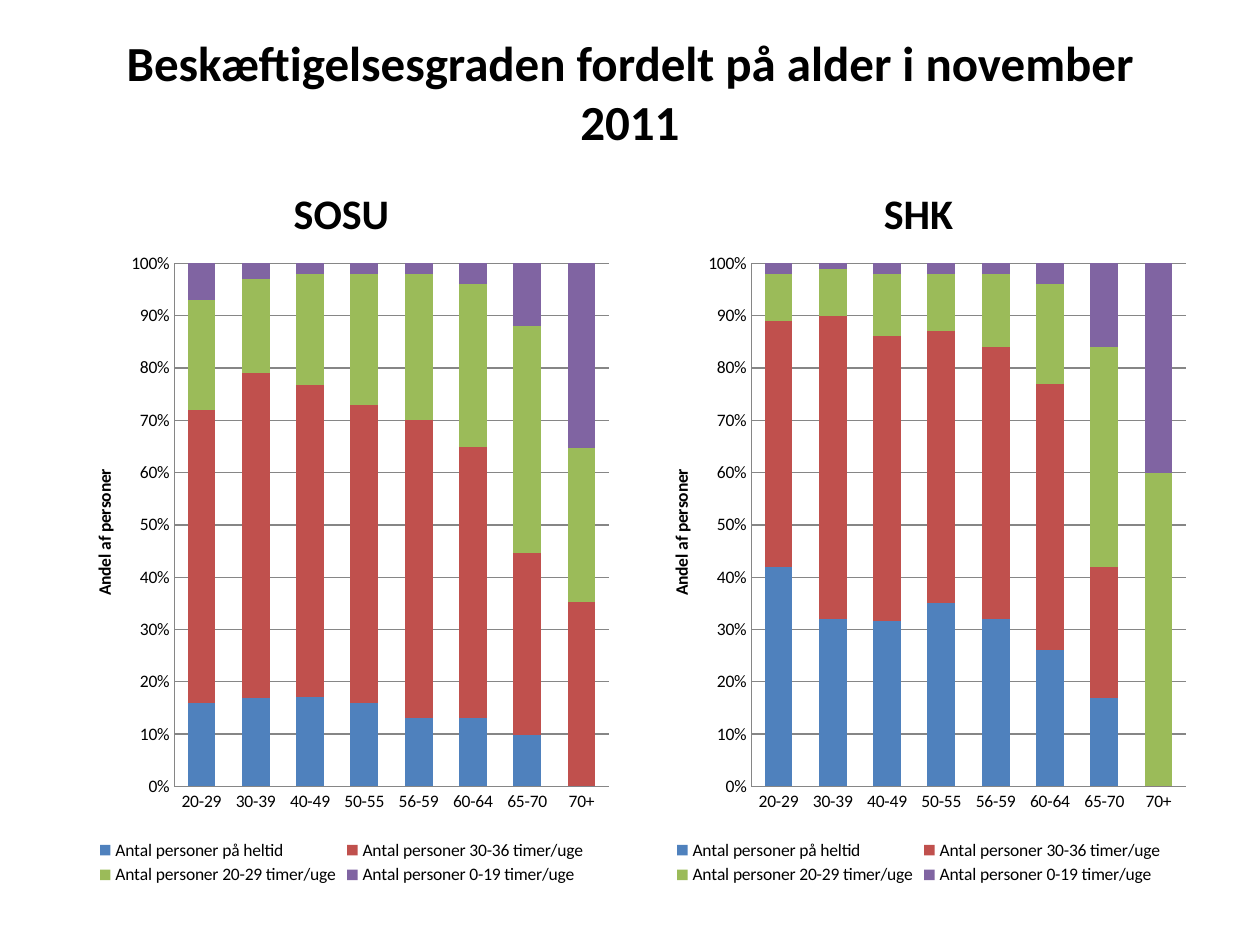
from lxml.etree import SubElement
from pptx import Presentation
from pptx.chart.data import CategoryChartData
from pptx.dml.color import RGBColor
from pptx.enum.chart import XL_CHART_TYPE, XL_LEGEND_POSITION, XL_TICK_MARK
from pptx.enum.text import MSO_ANCHOR, PP_ALIGN
from pptx.oxml.ns import qn
from pptx.util import Pt

TITLE = "Beskæftigelsesgraden fordelt på alder i november 2011"
AXIS = "Andel af personer"
AGES = ["20-29", "30-39", "40-49", "50-55", "56-59", "60-64", "65-70", "70+"]
BLACK = RGBColor(0, 0, 0)
GRAY = RGBColor(0x86, 0x86, 0x86)
SERIES = [
    ("Antal personer på heltid", RGBColor(0x4F, 0x81, 0xBD)),
    ("Antal personer 30-36 timer/uge", RGBColor(0xC0, 0x50, 0x4D)),
    ("Antal personer 20-29 timer/uge", RGBColor(0x9B, 0xBB, 0x59)),
    ("Antal personer 0-19 timer/uge", RGBColor(0x80, 0x64, 0xA2)),
]
GROUPS = {
    "SOSU": [
        [16, 17, 17, 16, 13, 13, 10, 0],
        [56, 62, 59, 57, 57, 52, 35, 35],
        [21, 18, 21, 25, 28, 31, 44, 29],
        [7, 3, 2, 2, 2, 4, 12, 35],
    ],
    "SHK": [
        [42, 32, 32, 35, 32, 26, 17, 0],
        [47, 58, 55, 52, 52, 51, 25, 0],
        [9, 9, 12, 11, 14, 19, 42, 60],
        [2, 1, 2, 2, 2, 4, 16, 40],
    ],
}
WIDE, HIGH = 720, 540
EDGE, COL = 36, 318.25
HEAD_TOP, HEAD_H = 105.75, 33.75
CHART_TOP, CHART_H = HEAD_TOP + HEAD_H, 369
PLOT = {"x": 0.2, "y": 0.03, "w": 0.78, "h": 0.81}


def place(shape, x, y, w, h):
    shape.left, shape.top, shape.width, shape.height = map(Pt, (x, y, w, h))


def style(font, size, bold=False):
    font.name, font.size, font.bold = "Calibri", Pt(size), bold
    font.color.rgb = BLACK


def write(shape, text, size, anchor):
    frame = shape.text_frame
    frame.text = text
    frame.vertical_anchor = anchor
    para = frame.paragraphs[0]
    para.alignment = PP_ALIGN.CENTER
    style(para.font, size, True)


def fix_plot(chart):
    """Pin the inner plot area to the PLOT fractions of the chart."""
    area = chart.plots[0]._element.getparent()
    layout = area.find(qn("c:layout"))
    if layout is None:
        layout = SubElement(area, qn("c:layout"))
        area.insert(0, layout)
    manual = SubElement(layout, qn("c:manualLayout"))
    rules = [("layoutTarget", "inner"), ("xMode", "edge"), ("yMode", "edge")]
    for tag, val in rules + list(PLOT.items()):
        SubElement(manual, qn("c:" + tag)).set("val", str(val))


def draw_chart(slide, x, rows):
    data = CategoryChartData()
    data.categories = AGES
    for (name, _), vals in zip(SERIES, rows):
        data.add_series(name, vals)
    chart = slide.shapes.add_chart(
        XL_CHART_TYPE.COLUMN_STACKED_100, Pt(x), Pt(CHART_TOP),
        Pt(COL), Pt(CHART_H), data).chart
    style(chart.font, 10)
    chart.has_title = False
    chart.has_legend = True
    chart.legend.position = XL_LEGEND_POSITION.BOTTOM
    chart.legend.include_in_layout = False

    plot = chart.plots[0]
    plot.gap_width, plot.overlap = 95, 100
    plot.vary_by_categories = False
    for series, (_, color) in zip(plot.series, SERIES):
        series.format.fill.solid()
        series.format.fill.fore_color.rgb = color

    for axis in (chart.category_axis, chart.value_axis):
        axis.major_tick_mark = axis.minor_tick_mark = XL_TICK_MARK.NONE
        axis.format.line.color.rgb = GRAY
    axis = chart.value_axis
    axis.has_major_gridlines = True
    axis.major_gridlines.format.line.color.rgb = GRAY
    axis.tick_labels.number_format = "0%"
    axis.tick_labels.number_format_is_linked = False
    frame = axis.axis_title.text_frame
    frame.text = AXIS
    style(frame.paragraphs[0].font, 10, True)
    fix_plot(chart)


deck = Presentation()
deck.slide_width, deck.slide_height = Pt(WIDE), Pt(HIGH)
slide = deck.slides.add_slide(deck.slide_layouts.get_by_name("Comparison"))
title, left, left_body, right, right_body = slide.placeholders
for spare in (left_body, right_body):
    spare.element.getparent().remove(spare.element)

place(title, EDGE, 21.6, WIDE - 2 * EDGE, 61.2)
write(title, TITLE, 28, MSO_ANCHOR.MIDDLE)
starts = (EDGE, WIDE - EDGE - COL)
for head, x, (name, rows) in zip((left, right), starts, GROUPS.items()):
    place(head, x, HEAD_TOP, COL, HEAD_H)
    write(head, name, 24, MSO_ANCHOR.BOTTOM)
    draw_chart(slide, x, rows)
deck.save("out.pptx")
